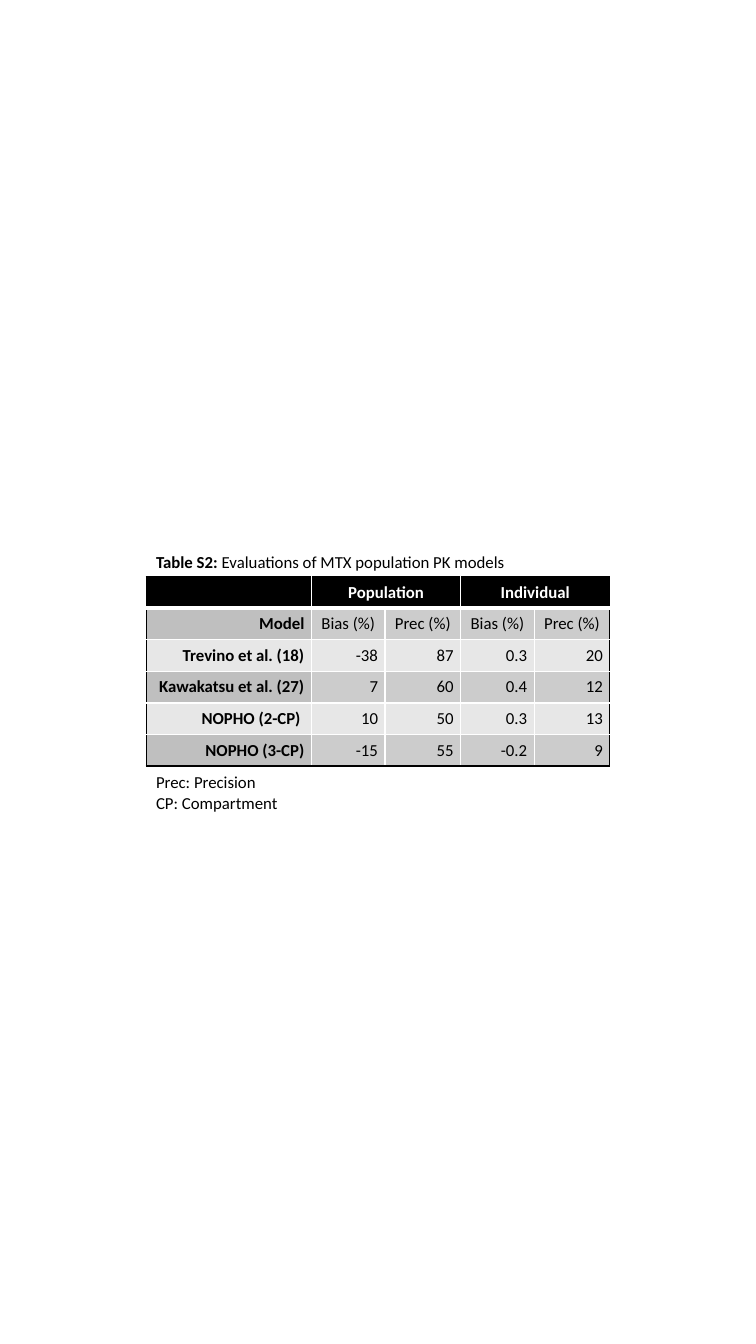
from dataclasses import dataclass

from lxml.etree import SubElement
from pptx import Presentation
from pptx.dml.color import RGBColor
from pptx.enum.text import MSO_ANCHOR as Anchor, MSO_AUTO_SIZE as AutoSize, PP_ALIGN as Align
from pptx.oxml.ns import qn
from pptx.util import Inches, Pt


@dataclass(frozen=True)
class Theme:
    font: str = "Calibri"
    size: int = 12
    black: str = "000000"
    white: str = "FFFFFF"
    light: str = "E7E7E7"
    dark: str = "CCCCCC"
    dark_label: str = "BFBFBF"
    thin: int = 1
    thick: int = 3


@dataclass(frozen=True)
class Entry:
    text: str
    span: int = 1


@dataclass(frozen=True)
class Span:
    text: str
    bold: bool = False


THEME = Theme()
LEFT, TABLE_TOP = 1.45, 5.72
TABLE_WIDTH, TABLE_HEIGHT = 4.6, 1.88
COLUMN_WIDTHS = [1.64, 0.73, 0.75, 0.73, 0.75]
SIDE_INSET = 0.07

GROUPS = [Entry(""), Entry("Population", 2), Entry("Individual", 2)]
MODELS = [
    ["Model", *["Bias (%)", "Prec (%)"] * 2],
    ["Trevino et al. (18)", "-38", "87", "0.3", "20"],
    ["Kawakatsu et al. (27)", "7", "60", "0.4", "12"],
    ["NOPHO (2-CP) ", "10", "50", "0.3", "13"],
    ["NOPHO (3-CP)", "-15", "55", "-0.2", "9"],
]
LAST_ROW, LAST_COLUMN = len(MODELS), len(COLUMN_WIDTHS) - 1


def add_span(para, text: str, *, bold: bool = False, color: str = THEME.black) -> None:
    span = para.add_run()
    span.text = text
    span.font.name = THEME.font
    span.font.size = Pt(THEME.size)
    span.font.bold = bold
    span.font.color.rgb = RGBColor.from_string(color)


def add_text(page, top: float, width: float, height: float, lines: list[list[Span]]) -> None:
    box = page.shapes.add_textbox(Inches(LEFT), Inches(top), Inches(width), Inches(height))
    frame = box.text_frame
    frame.word_wrap = True
    frame.auto_size = AutoSize.SHAPE_TO_FIT_TEXT
    for index, line in enumerate(lines):
        para = frame.add_paragraph() if index else frame.paragraphs[0]
        for span in line:
            add_span(para, span.text, bold=span.bold)


def set_border(cell, side: str, color: str, width: int) -> None:
    line = SubElement(cell._tc.get_or_add_tcPr(), qn(f"a:ln{side}"), w=str(Pt(width)))
    SubElement(SubElement(line, qn("a:solidFill")), qn("a:srgbClr"), val=color)


def style_cell(cell, row: int, column: int, span: int = 1) -> None:
    """Black outer frame, white inner grid and banded fills."""
    outer_edges = {
        "L": column == 0,
        "R": column + span - 1 == LAST_COLUMN,
        "T": row == 0,
        "B": row == LAST_ROW,
    }
    for side, is_outer in outer_edges.items():
        width = THEME.thick if row == 0 and side == "B" else THEME.thin
        set_border(cell, side, THEME.black if is_outer else THEME.white, width)
    if row == 0:
        fill = THEME.black
    elif row % 2 == 0:
        fill = THEME.light
    else:
        fill = THEME.dark if column else THEME.dark_label
    cell.fill.solid()
    cell.fill.fore_color.rgb = RGBColor.from_string(fill)
    cell.vertical_anchor = Anchor.MIDDLE
    cell.margin_left = cell.margin_right = Inches(SIDE_INSET)
    cell.margin_top = cell.margin_bottom = 0


def fill_cell(cell, text: str, *, align: Align, bold: bool, color: str) -> None:
    para = cell.text_frame.paragraphs[0]
    para.alignment = align
    para.font.size = Pt(THEME.size)
    if text:
        add_span(para, text, bold=bold, color=color)


def add_model_table(page) -> None:
    table = page.shapes.add_table(
        LAST_ROW + 1, LAST_COLUMN + 1,
        Inches(LEFT), Inches(TABLE_TOP), Inches(TABLE_WIDTH), Inches(TABLE_HEIGHT),
    ).table
    table.first_row = table.horz_banding = False
    for column, width in zip(table.columns, COLUMN_WIDTHS):
        column.width = Inches(width)
    for row in table.rows:
        row.height = Inches(TABLE_HEIGHT / (LAST_ROW + 1))

    # Group headings
    column = 0
    for group in GROUPS:
        cell = table.cell(0, column)
        if group.span > 1:
            cell.merge(table.cell(0, column + group.span - 1))
        style_cell(cell, 0, column, group.span)
        for covered in range(column + 1, column + group.span):
            style_cell(table.cell(0, covered), 0, covered)
        fill_cell(cell, group.text, align=Align.CENTER, bold=True, color=THEME.white)
        column += group.span

    # Column headings and model rows
    for row, values in enumerate(MODELS, start=1):
        for column, value in enumerate(values):
            cell = table.cell(row, column)
            style_cell(cell, row, column)
            align = Align.CENTER if row == 1 and column else Align.RIGHT
            fill_cell(cell, value, align=align, bold=column == 0, color=THEME.black)


def main() -> None:
    deck = Presentation()
    deck.slide_width, deck.slide_height = Inches(7.5), Inches(13.33)
    page = deck.slides.add_slide(deck.slide_layouts[6])

    add_model_table(page)
    # Caption above and abbreviations below the table
    add_text(page, 5.42, 4.24, 0.3,
             [[Span("Table S2: ", bold=True), Span("Evaluations of MTX population PK models")]])
    add_text(page, 7.61, TABLE_WIDTH, 0.5,
             [[Span("Prec: Precision")], [Span("CP: Compartment")]])
    deck.save("out.pptx")


if __name__ == "__main__":
    main()
